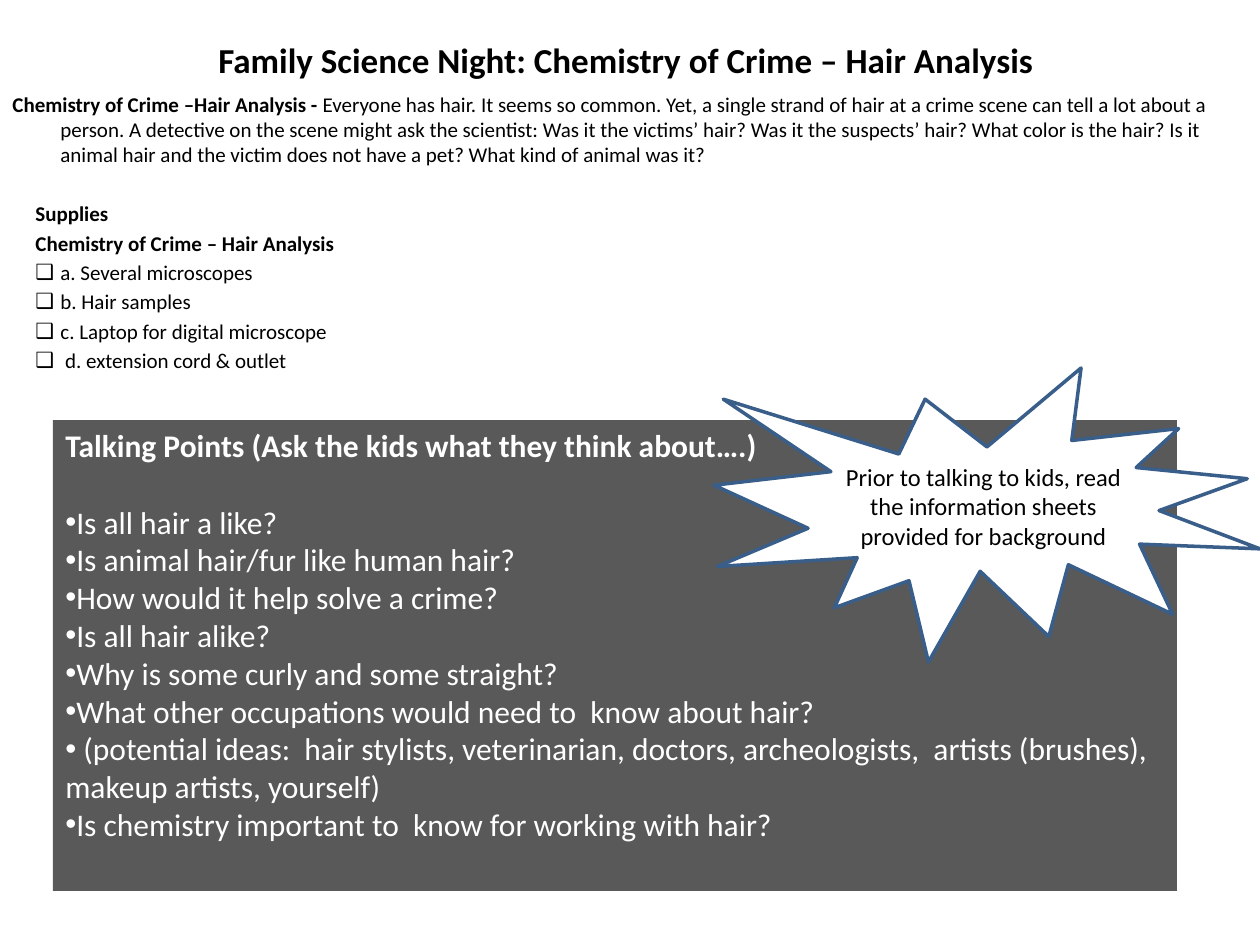
from pptx import Presentation
from pptx.dml.color import RGBColor
from pptx.enum.shapes import MSO_SHAPE
from pptx.enum.text import MSO_ANCHOR, MSO_AUTO_SIZE, PP_ALIGN
from pptx.oxml.ns import qn
from pptx.util import Pt
from lxml.etree import SubElement

PX = 914400 / 126
HUES = {"ink": "000000", "paper": "FFFFFF", "panel": "595959", "edge": "395E89"}


def px(*nums):
    return [round(n * PX) for n in nums]


def write(frame, text, size=12, hue="ink", bold=False, lead="", align=PP_ALIGN.LEFT,
          left=0, hang=0, before=0, mark=None):
    para = frame.paragraphs[0]
    if para.runs:
        para = frame.add_paragraph()
    para.alignment = align
    para.space_before = Pt(before)
    props = para._p.get_or_add_pPr()
    props.set("marL", str(px(left)[0]))
    props.set("indent", str(px(-hang)[0]))
    if mark:
        tint = SubElement(props, qn("a:buClr"))
        SubElement(tint, qn("a:srgbClr"), val=HUES[hue])
        SubElement(props, qn("a:buFont"), typeface="Arial")
        SubElement(props, qn("a:buChar"), char=mark)
    else:
        SubElement(props, qn("a:buNone"))
    for part, heavy in ((lead, True), (text, bold)):
        if part:
            run = para.add_run()
            run.text = part
            run.font.name = "Calibri"
            run.font.size = Pt(size)
            run.font.bold = heavy
            run.font.color.rgb = RGBColor.from_string(HUES[hue])


deck = Presentation()
deck.slide_width, deck.slide_height = px(1260, 945)
slide = deck.slides.add_slide(deck.slide_layouts[5])
shapes = slide.shapes

title = shapes.title
title.left, title.top, title.width, title.height = px(63, 21, 1134, 78)
title.text_frame.auto_size = MSO_AUTO_SIZE.NONE
title.text_frame.vertical_anchor = MSO_ANCHOR.MIDDLE
write(title.text_frame, "Family Science Night: Chemistry of Crime – Hair Analysis ",
      size=20, bold=True, align=PP_ALIGN.CENTER)

body = shapes.add_textbox(*px(0, 85, 1239, 305)).text_frame
body.word_wrap = True
write(body, "Everyone has hair. It seems so common. Yet, a single strand of hair at a crime "
      "scene can tell a lot about a person. A detective on the scene might ask the scientist: "
      "Was it the victims’ hair? Was it the suspects’ hair? What color is the hair? Is it "
      "animal hair and the victim does not have a pet? What kind of animal was it?",
      lead="Chemistry of Crime –Hair Analysis - ", left=48, hang=48)
write(body, "Supplies", bold=True, left=48, hang=25, before=19.4)
write(body, "Chemistry of Crime – Hair Analysis", bold=True, left=48, hang=25, before=2.4)
for item in ("a. Several microscopes", "b. Hair samples",
             "c. Laptop for digital microscope", " d. extension cord & outlet"):
    write(body, item, left=48, hang=25, before=2.4, mark="❑")

panel = shapes.add_shape(MSO_SHAPE.RECTANGLE, *px(53, 420, 1124, 471))
burst = shapes.add_shape(MSO_SHAPE.EXPLOSION1, *px(714, 368, 546, 294))
for shape, fill, anchor in ((panel, "panel", MSO_ANCHOR.TOP),
                            (burst, "paper", MSO_ANCHOR.MIDDLE)):
    shape.shadow.inherit = False
    shape.fill.solid()
    shape.fill.fore_color.rgb = RGBColor.from_string(HUES[fill])
    shape.text_frame.word_wrap = True
    shape.text_frame.vertical_anchor = anchor
panel.line.fill.background()
burst.line.color.rgb = RGBColor.from_string(HUES["edge"])
burst.line.width = Pt(2)

talk = panel.text_frame
write(talk, "Talking Points (Ask the kids what they think about….)",
      size=18, hue="paper", bold=True)
points = (
    "Is all hair a like?",
    "Is animal hair/fur like human hair?",
    "How would it help solve a crime?",
    "Is all hair alike?",
    "Why is some curly and some straight?",
    "What other occupations would need to  know about hair?",
    " (potential ideas:  hair stylists, veterinarian, doctors, archeologists,  "
    "artists (brushes), makeup artists, yourself)",
    "Is chemistry important to  know for working with hair?",
)
for rank, point in enumerate(points):
    write(talk, point, size=18, hue="paper", before=0 if rank else 22, mark="•")

write(burst.text_frame, "Prior to talking to kids, read the information sheets "
      "provided for background", size=14, align=PP_ALIGN.CENTER)

deck.save("out.pptx")
